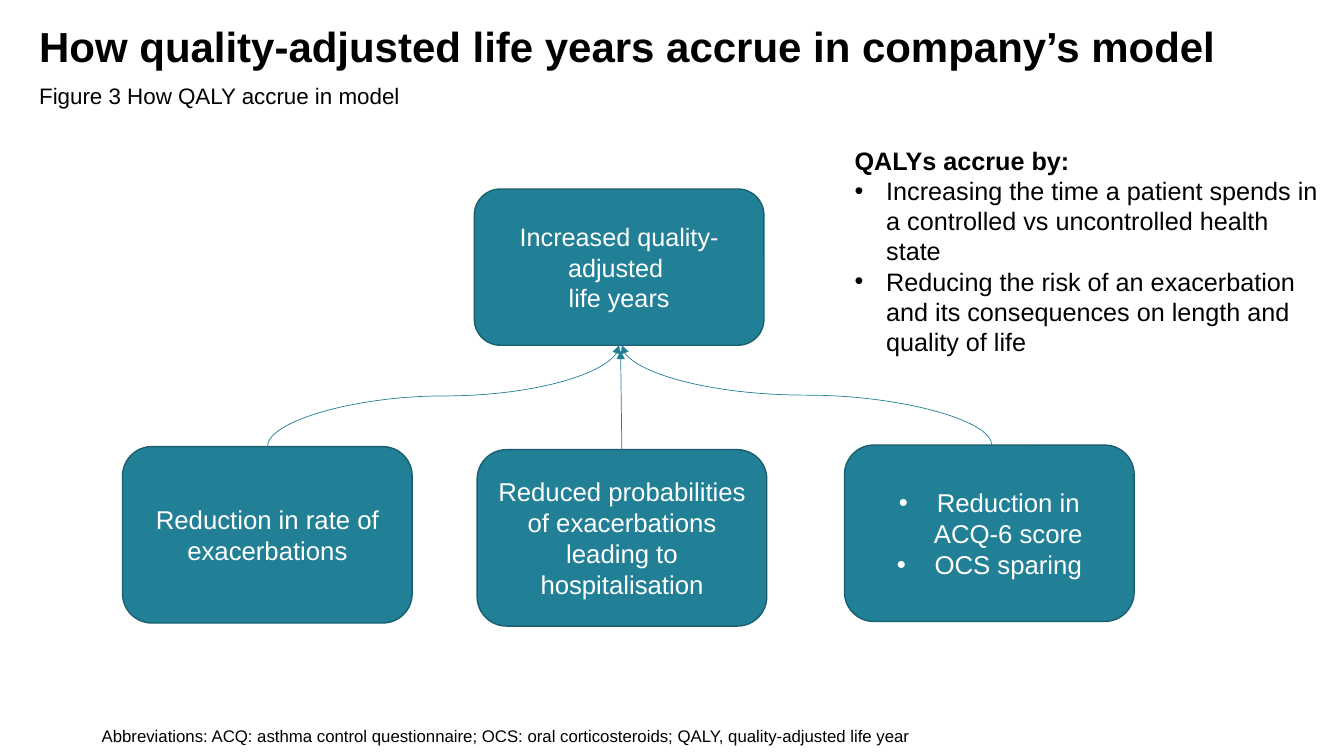
import pptx
import pptx.dml.color
import pptx.enum.shapes
import pptx.enum.text
import pptx.oxml
import pptx.oxml.ns
import pptx.util

Pt = pptx.util.Pt
ALIGN = pptx.enum.text.PP_ALIGN
ANCHOR = pptx.enum.text.MSO_ANCHOR
SHAPE = pptx.enum.shapes.MSO_SHAPE
CONNECTOR = pptx.enum.shapes.MSO_CONNECTOR
TEAL, EDGE, BLACK, WHITE = "228096", "195F6F", "000000", "FFFFFF"


def color(value):
    return pptx.dml.color.RGBColor.from_string(value)


def write(frame, text, size=18, fill=BLACK, bold=False, align=ALIGN.LEFT, hang=0, spacing=None):
    paragraph = frame.add_paragraph() if frame.text else frame.paragraphs[0]
    paragraph.text = text
    paragraph.alignment = align
    if spacing:
        paragraph.line_spacing = spacing
    if hang:
        properties = paragraph._p.get_or_add_pPr()
        properties.set("marL", str(Pt(hang)))
        properties.set("indent", str(-Pt(hang)))
        for tag, name, value in (("buFont", "typeface", "Arial"), ("buChar", "char", "•")):
            bullet = pptx.oxml.parse_xml(f'<a:{tag} {pptx.oxml.ns.nsdecls("a")}/>')
            bullet.set(name, value)
            properties.append(bullet)
    for run in paragraph.runs:
        run.font.name = "Arial"
        run.font.size = Pt(size)
        run.font.bold = bold
        run.font.color.rgb = color(fill)


deck = pptx.Presentation()
deck.slide_width, deck.slide_height = Pt(960), Pt(540)
slide = deck.slides.add_slide(deck.slide_layouts[6])
shapes = slide.shapes

captions = [
    (20.9, 15.1, 907, 49, True, "How quality-adjusted life years accrue in company’s model",
     dict(size=30, bold=True, spacing=0.9)),
    (65.5, 516.2, 822, 28, True,
     "Abbreviations: ACQ: asthma control questionnaire; OCS: oral corticosteroids; "
     "QALY, quality-adjusted life year", dict(size=12, spacing=0.9)),
    (20.9, 55.4, 275, 26.6, False, "Figure 3 How QALY accrue in model", dict(size=16)),
]
for left, top, width, height, wrap, text, style in captions:
    caption = shapes.add_textbox(Pt(left), Pt(top), Pt(width), Pt(height)).text_frame
    caption.word_wrap = wrap
    write(caption, text, **style)

BOX_WIDTH = 206.9
boxes = [
    (338.8, 135, 111.6, 18, 0, ["Increased quality-adjusted \vlife years"]),
    (87.5, 319, 126, 18.4, 0, ["Reduction in rate of exacerbations"]),
    (603.2, 317.9, 126, 18.4, 27, ["Reduction in ACQ-6 score", "OCS sparing"]),
    (340.8, 321.2, 126, 18.4, 0,
     ["Reduced probabilities of exacerbations leading to hospitalisation"]),
]
for left, top, height, size, hang, lines in boxes:
    box = shapes.add_shape(SHAPE.ROUNDED_RECTANGLE, Pt(left), Pt(top), Pt(BOX_WIDTH), Pt(height))
    box.shadow.inherit = False
    box.fill.solid()
    box.fill.fore_color.rgb = color(TEAL)
    box.line.color.rgb = color(EDGE)
    box.line.width = Pt(1)
    box.text_frame.word_wrap = True
    box.text_frame.vertical_anchor = ANCHOR.MIDDLE
    for line in lines:
        write(box.text_frame, line, size=size, fill=WHITE, align=ALIGN.CENTER, hang=hang)

arrows = [
    (CONNECTOR.CURVE, 191, 319, 442.3, 246.6),
    (CONNECTOR.CURVE, 708.4, 317.9, 444.2, 246.6),
    (CONNECTOR.STRAIGHT, 444.2, 321.2, 443.3, 250.6),
]
for kind, x1, y1, x2, y2 in arrows:
    curved = kind == CONNECTOR.CURVE
    if curved:
        middle_x, middle_y = (x1 + x2) / 2, (y1 + y2) / 2
        run, rise = x2 - x1, y1 - y2
        x1, x2 = middle_x - rise / 2, middle_x + rise / 2
        y1, y2 = middle_y - run / 2, middle_y + run / 2
    arrow = shapes.add_connector(kind, Pt(x1), Pt(y1), Pt(x2), Pt(y2))
    if curved:
        arrow._element.spPr.find(pptx.oxml.ns.qn("a:xfrm")).set("rot", str(270 * 60000))
    arrow.line.color.rgb = color(TEAL)
    arrow.line.width = Pt(0.5)
    namespace = pptx.oxml.ns.nsdecls("a")
    arrow.line._get_or_add_ln().append(
        pptx.oxml.parse_xml(f'<a:tailEnd {namespace} type="triangle"/>'))
    arrow._element.spPr.append(pptx.oxml.parse_xml(f"<a:effectLst {namespace}/>"))

accrual = shapes.add_textbox(Pt(603.4), Pt(100.1), Pt(345), Pt(160)).text_frame
accrual.word_wrap = True
write(accrual, "QALYs accrue by:", bold=True)
for reason in (
    "Increasing the time a patient spends in a controlled vs uncontrolled health state",
    "Reducing the risk of an exacerbation and its consequences on length and quality of life",
):
    write(accrual, reason, hang=22.5)

deck.save("out.pptx")
